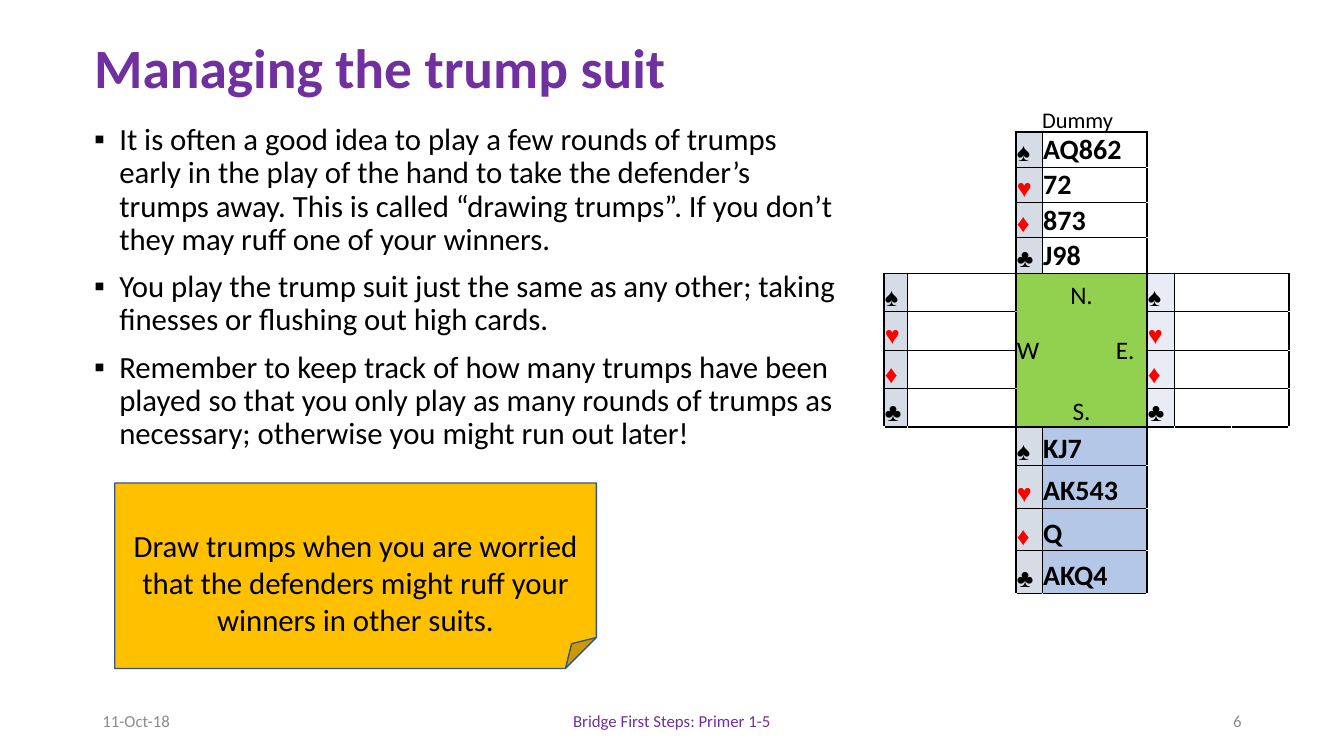
from lxml import etree
from pptx import Presentation
from pptx import util as u
from pptx.dml.color import RGBColor
from pptx.enum import shapes, text
from pptx.oxml import ns

COLORS = {
    "purple": "7030A0", "black": "000000", "grey": "8C8C8C", "red": "FF0000",
    "white": "FFFFFF", "gold": "FFC000", "navy": "325491", "green": "92D050",
    "suit": "D6DCE5", "east": "E9EBF5", "declarer": "B4C7E7",
}
LEFT, CENTER, RIGHT = text.PP_ALIGN.LEFT, text.PP_ALIGN.CENTER, text.PP_ALIGN.RIGHT
MIDDLE, BOTTOM = text.MSO_ANCHOR.MIDDLE, text.MSO_ANCHOR.BOTTOM
SUITS = "♠♥♦♣"

BULLETS = [
    "It is often a good idea to play a few rounds of trumps early in the play of the hand "
    "to take the defender’s trumps away. This is called “drawing trumps”. If you don’t they "
    "may ruff one of your winners.",
    "You play the trump suit just the same as any other; taking finesses or flushing out "
    "high cards.",
    "Remember to keep track of how many trumps have been played so that you only play as "
    "many rounds of trumps as necessary; otherwise you might run out later!",
]

# Hands: first row, suit column, suit fill, card fill, holdings
HANDS = [
    (1, 3, "suit", None, ["AQ862", "72", "873", "J98"]),
    (5, 1, "suit", None, [""] * 4),
    (5, 5, "east", None, [""] * 4),
    (9, 3, "suit", "declarer", ["KJ7", "AK543", "Q", "AKQ4"]),
]
# Compass: row, column, last row, last column, letter, alignment, anchor
COMPASS = [
    (5, 3, 5, 4, "N.", CENTER, BOTTOM),
    (6, 3, 7, 3, "W", LEFT, MIDDLE),
    (6, 4, 7, 4, "E.", RIGHT, MIDDLE),
    (8, 3, 8, 4, "S.", CENTER, BOTTOM),
]
COLUMN_WIDTHS = [19.4, 16.6, 77.8, 18.7, 74.9, 19.4, 41, 41, 41]
ROW_HEIGHTS = [29.5] + [24.7] * 4 + [27.5] * 5 + [30.4] * 3 + [21.6]


def apply(target, values):
    for name, value in values.items():
        setattr(target, name, value)


def rgb(name):
    return RGBColor.from_string(COLORS[name])


class SlideBuilder:
    def __init__(self, slide, font="Calibri"):
        self.slide = slide
        self.font = font

    def set_text(self, frame, lines, size, color="black", bold=False, font=None,
                 frame_format=None, **paragraph_format):
        apply(frame, {"word_wrap": True, "auto_size": text.MSO_AUTO_SIZE.NONE,
                      **(frame_format or {})})
        for index, line in enumerate(lines):
            paragraph = frame.add_paragraph() if index else frame.paragraphs[0]
            apply(paragraph, paragraph_format)
            run = paragraph.add_run()
            run.text = line
            apply(run.font, {"name": font or self.font, "size": u.Pt(size), "bold": bold})
            run.font.color.rgb = rgb(color)

    def place(self, shape, left, top, width, height):
        apply(shape, {"left": u.Pt(left), "top": u.Pt(top),
                      "width": u.Pt(width), "height": u.Pt(height)})

    def title(self, box, line):
        shape = self.slide.shapes.title
        self.place(shape, *box)
        self.set_text(shape.text_frame, [line], 39.6, "purple", True, alignment=LEFT,
                      line_spacing=0.9, frame_format={"vertical_anchor": MIDDLE})

    def bullets(self, box, lines):
        shape = self.slide.placeholders[1]
        self.place(shape, *box)
        self.set_text(shape.text_frame, lines, 22, line_spacing=0.9, space_before=u.Pt(10))
        for paragraph in shape.text_frame.paragraphs:
            properties = paragraph._p.get_or_add_pPr()
            for name, value in {"marL": u.Pt(18), "indent": u.Pt(-18)}.items():
                properties.set(name, str(int(value)))
            etree.SubElement(properties, ns.qn("a:buFont"), typeface="Arial")
            etree.SubElement(properties, ns.qn("a:buChar"), char="▪")

    def label(self, box, line, size, color="black", alignment=LEFT, anchor=MIDDLE):
        shape = self.slide.shapes.add_textbox(*map(u.Pt, box))
        self.set_text(shape.text_frame, [line], size, color, alignment=alignment,
                      frame_format={"vertical_anchor": anchor})

    def note(self, box, line):
        shape = self.slide.shapes.add_shape(
            shapes.MSO_SHAPE.FOLDED_CORNER, *map(u.Pt, box))
        shape.shadow.inherit = False
        shape.fill.solid()
        shape.fill.fore_color.rgb = rgb("gold")
        shape.line.color.rgb = rgb("navy")
        shape.line.width = u.Pt(1)
        self.set_text(shape.text_frame, [line], 22, alignment=CENTER,
                      frame_format={"vertical_anchor": MIDDLE, "margin_top": u.Pt(35)})

    def table(self, left, top, widths, heights):
        frame = self.slide.shapes.add_table(
            len(heights), len(widths), *map(u.Pt, (left, top, sum(widths), sum(heights))))
        table = frame.table
        apply(table, {"first_row": False, "horz_banding": False})
        for column, width in zip(table.columns, widths):
            column.width = u.Pt(width)
        for row, height in zip(table.rows, heights):
            row.height = u.Pt(height)
        for cell in table.iter_cells():
            apply(cell, {"margin_left": u.Pt(0.7), "margin_right": u.Pt(0.7),
                         "margin_top": u.Pt(0.7), "margin_bottom": 0})
            cell.fill.background()
            # Small type keeps empty cells from stretching their rows
            end = etree.SubElement(cell.text_frame.paragraphs[0]._p, ns.qn("a:endParaRPr"))
            end.set("sz", "1000")
        return table

    def cell(self, cell, line, size=18, color="black", bold=False, font=None,
             fill=None, alignment=LEFT, anchor=BOTTOM):
        cell.vertical_anchor = anchor
        if fill:
            cell.fill.solid()
            cell.fill.fore_color.rgb = rgb(fill)
        if line:
            self.set_text(cell.text_frame, [line], size, color, bold, font,
                          alignment=alignment)

    def borders(self, table, zones):
        for row in range(len(table.rows)):
            for column in range(len(table.columns)):
                cell = table.cell(row, column)
                across = cell.span_width if cell.is_merge_origin else 1
                down = cell.span_height if cell.is_merge_origin else 1
                neighbours = {"L": (row, column - 1), "R": (row, column + across),
                              "T": (row - 1, column), "B": (row + down, column)}
                properties = cell._tc.get_or_add_tcPr()
                for index, (side, neighbour) in enumerate(neighbours.items()):
                    pair = {zones.get((row, column)), zones.get(neighbour)}
                    color, width = "black", 1
                    if pair == {None}:
                        color = "white"
                    elif pair == {"compass"}:
                        color, width = "green", 0.25
                    line = etree.Element(ns.qn("a:ln" + side), w=str(int(u.Pt(width))))
                    fill = etree.SubElement(line, ns.qn("a:solidFill"))
                    etree.SubElement(fill, ns.qn("a:srgbClr"), val=COLORS[color])
                    properties.insert(index, line)

    def deal(self, left, top):
        table = self.table(left, top, COLUMN_WIDTHS, ROW_HEIGHTS)
        zones = {}
        # Four hands
        for first_row, column, suit_fill, card_fill, holdings in HANDS:
            for row, (suit, cards) in enumerate(zip(SUITS, holdings), first_row):
                self.cell(table.cell(row, column), suit, font="Arial", fill=suit_fill,
                          color="red" if suit in "♥♦" else "black")
                self.cell(table.cell(row, column + 1), cards, 20, bold=True, fill=card_fill)
                zones[row, column] = zones[row, column + 1] = "hand"
                if column == 5:
                    table.cell(row, 6).merge(table.cell(row, 7))
                    zones[row, 7] = "hand"
        # Compass in the middle
        for row, column, last_row, last_column, letter, alignment, anchor in COMPASS:
            cell = table.cell(row, column)
            cell.merge(table.cell(last_row, last_column))
            self.cell(cell, letter, fill="green", alignment=alignment, anchor=anchor)
            if alignment == RIGHT:
                cell.margin_right = u.Pt(9)
            for r in range(row, last_row + 1):
                for c in range(column, last_column + 1):
                    zones[r, c] = "compass"
        self.borders(table, zones)


def main():
    presentation = Presentation()
    apply(presentation, {"slide_width": u.Pt(960), "slide_height": u.Pt(540)})
    slide = presentation.slides.add_slide(presentation.slide_layouts[1])
    builder = SlideBuilder(slide)

    # Title and advice
    builder.title((60, 25.2, 828, 50.4), "Managing the trump suit")
    builder.bullets((60, 85, 546, 209.5), BULLETS)
    builder.note((82, 345, 344, 132.5), "Draw trumps when you are worried that the "
                 "defenders might ruff your winners in other suits.")

    # Bridge deal
    builder.label((737.3, 72, 82, 26.6), "Dummy", 16, anchor=text.MSO_ANCHOR.TOP)
    builder.deal(612, 64.8)

    # Footer
    builder.label((66, 500.5, 216, 28.75), "11-Oct-18", 12, "grey")
    builder.label((318, 500.5, 324, 28.75), "Bridge First Steps: Primer 1-5", 12,
                  "purple", CENTER)
    builder.label((678, 500.5, 216, 28.75), "6", 12, "grey", RIGHT)
    presentation.save("out.pptx")


if __name__ == "__main__":
    main()
